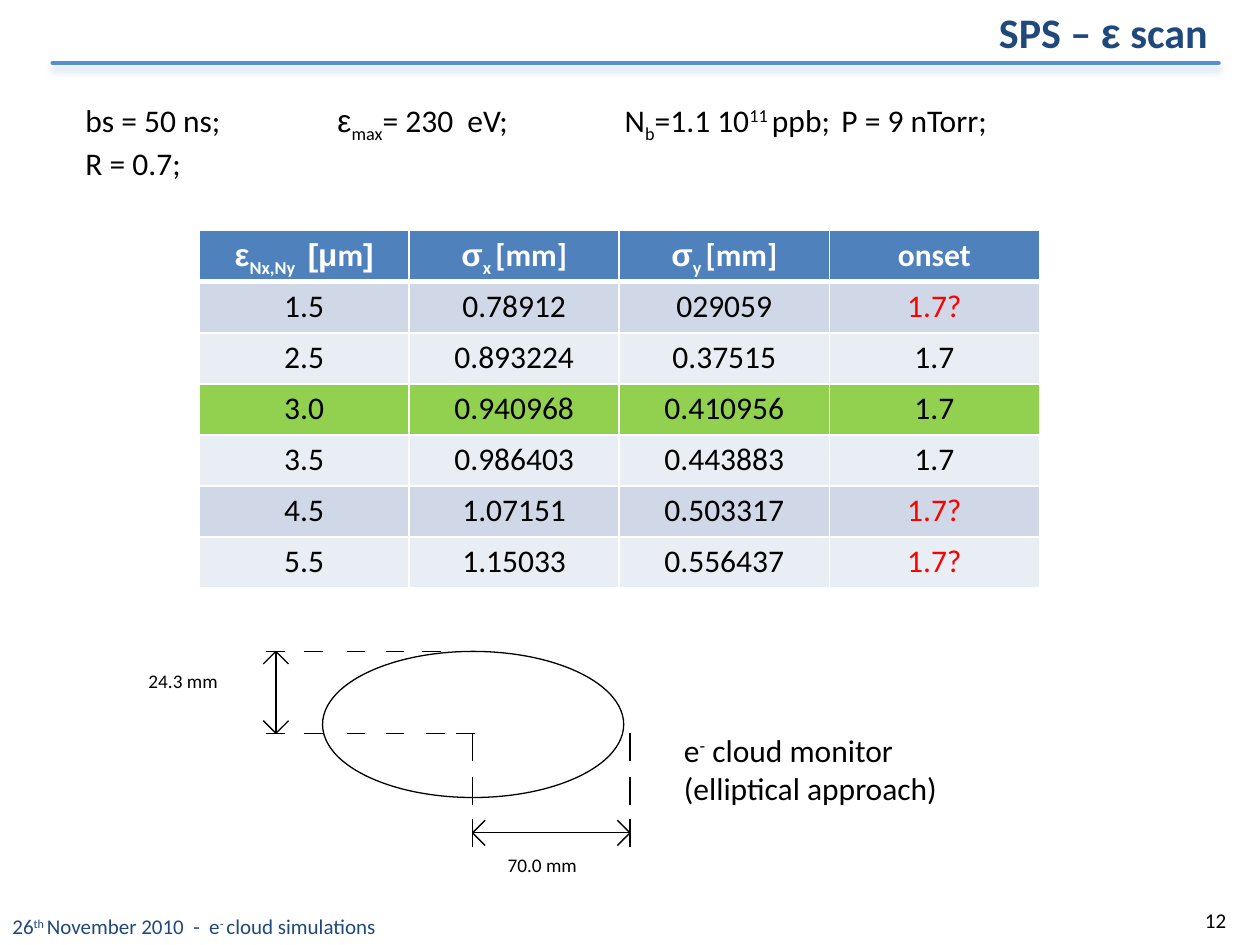
from lxml import etree
from pptx import Presentation
from pptx.dml.color import RGBColor
from pptx.enum.shapes import MSO_CONNECTOR, MSO_SHAPE
from pptx.enum.text import MSO_ANCHOR, PP_ALIGN
from pptx.oxml import parse_xml
from pptx.oxml.ns import nsdecls, qn
from pptx.util import Inches, Pt

STRAIGHT = MSO_CONNECTOR.STRAIGHT
ELLIPSE = MSO_SHAPE.OVAL
LEFT, CENTER, RIGHT = PP_ALIGN.LEFT, PP_ALIGN.CENTER, PP_ALIGN.RIGHT
TOP, MIDDLE = MSO_ANCHOR.TOP, MSO_ANCHOR.MIDDLE

BLACK, WHITE, RED, NAVY = "000000", "FFFFFF", "FF0000", "1F497D"
BLUE, GREEN = "4F81BD", "92D050"
BANDS = ("D0D8E8", "E9EDF4")
GREEK, SUB, SUPER = {"font": "Arial"}, {"baseline": -25}, {"baseline": 30}

HEADERS = [
    [("ε", GREEK), ("Nx,Ny   ", SUB), ("[μ", GREEK), "m", ("]", GREEK)],
    [("σ", GREEK), ("x ", SUB), "[mm]"],
    [("σ", GREEK), ("y ", SUB), "[mm]"],
    ["onset"],
]
SCAN = [
    ("1.5", "0.78912", "029059", "1.7?"),
    ("2.5", "0.893224", "0.37515", "1.7"),
    ("3.0", "0.940968", "0.410956", "1.7"),
    ("3.5", "0.986403", "0.443883", "1.7"),
    ("4.5", "1.07151", "0.503317", "1.7?"),
    ("5.5", "1.15033", "0.556437", "1.7?"),
]
HIGHLIGHTED = "3.0"


def color(value):
    return RGBColor.from_string(value)


def write(frame, paragraphs, size=18, fill=BLACK, bold=False, align=LEFT,
          line_spacing=None, space_after=None, tabs=()):
    for index, runs in enumerate(paragraphs):
        paragraph = frame.paragraphs[0] if index == 0 else frame.add_paragraph()
        paragraph.alignment = align
        paragraph.line_spacing = line_spacing
        if space_after:
            paragraph.space_after = Pt(space_after)
        if tabs:
            properties = paragraph._p.get_or_add_pPr()
            tab_list = etree.SubElement(properties, qn("a:tabLst"))
            for position in tabs:
                etree.SubElement(tab_list, qn("a:tab"), pos=str(Inches(position)), algn="l")
        for item in runs:
            text, style = (item, {}) if isinstance(item, str) else item
            run = paragraph.add_run()
            run.text = text
            run.font.name = style.get("font", "Calibri")
            run.font.size = Pt(size)
            run.font.bold = bold
            run.font.color.rgb = color(fill)
            if "baseline" in style:
                run._r.get_or_add_rPr().set("baseline", str(style["baseline"] * 1000))


def add_text(shapes, box, paragraphs, anchor=TOP, **text_format):
    shape = shapes.add_textbox(*map(Inches, box))
    shape.text_frame.word_wrap = True
    shape.text_frame.vertical_anchor = anchor
    write(shape.text_frame, paragraphs, **text_format)


def add_line(shapes, start, end, stroke=BLACK, width=0.75):
    line = shapes.add_connector(STRAIGHT, *map(Inches, (*start, *end)))
    line.line.color.rgb = color(stroke)
    line.line.width = Pt(width)
    effects = etree.SubElement(line._element.spPr, qn("a:effectLst"))
    return line, effects


def add_header(slide, left, top, width):
    line, effects = add_line(slide.shapes, (left, top + 0.5), (left + width, top + 0.5),
                             "558ED5", 2.75)
    line.line._get_or_add_ln().set("cap", "rnd")
    effects.append(parse_xml(
        f'<a:outerShdw {nsdecls("a")} blurRad="{Pt(4)}" dist="{Pt(3)}" dir="5400000" '
        'rotWithShape="0"><a:srgbClr val="95B3D7"><a:alpha val="40000"/></a:srgbClr>'
        '</a:outerShdw>'))
    add_text(slide.shapes, (left + 7.41, top, 2.08, 0.5),
             [["SPS – ", ("ε", GREEK), " scan"]], size=24, fill=NAVY, bold=True)


def add_footer(slide, left, top):
    add_text(slide.shapes, (left, top + 0.1, 9.42, 0.3),
             [["26", ("th ", SUPER), "November 2010  -  e", ("- ", SUPER), "cloud simulations"]],
             size=12, fill=NAVY)
    add_text(slide.shapes, (left + 7.5, top, 2.33, 0.4), [["12"]],
             anchor=MIDDLE, size=12, align=RIGHT)


def add_parameters(slide, box):
    add_text(slide.shapes, box, [
        ["bs = 50 ns; \t", ("ε", GREEK), ("max", SUB), "= 230  eV; \tN", ("b", SUB),
         "=1.1 10", ("11 ", SUPER), "ppb; \tP = 9 nTorr;"],
        ["R = 0.7;"],
    ], tabs=(2, 4.28, 6))


def set_borders(cell, top, bottom):
    properties = cell._tc.get_or_add_tcPr()
    widths = {"lnL": 1, "lnR": 1, "lnT": top, "lnB": bottom}
    for index, (side, width) in enumerate(widths.items()):
        properties.insert(index, parse_xml(
            f'<a:{side} {nsdecls("a")} w="{Pt(width)}"><a:solidFill>'
            f'<a:srgbClr val="{WHITE}"/></a:solidFill></a:{side}>'))


def fill_cell(cell, runs, background, top=1, bottom=1, **text_format):
    cell.margin_left = cell.margin_right = Inches(0.07)
    cell.margin_top = cell.margin_bottom = 0
    cell.fill.solid()
    cell.fill.fore_color.rgb = color(background)
    set_borders(cell, top, bottom)
    write(cell.text_frame, [runs], align=CENTER, line_spacing=1.15, **text_format)


def add_scan_table(slide, box):
    rows, columns = len(SCAN) + 1, len(HEADERS)
    table = slide.shapes.add_table(rows, columns, *map(Inches, box)).table
    for column in table.columns:
        column.width = Inches(box[2] / columns)
    for row in table.rows:
        row.height = Inches(box[3] / rows)
    for column, runs in enumerate(HEADERS):
        fill_cell(table.cell(0, column), runs, BLUE, bottom=3, fill=WHITE, bold=True)
    for row, values in enumerate(SCAN, 1):
        background = GREEN if values[0] == HIGHLIGHTED else BANDS[(row - 1) % 2]
        for column, value in enumerate(values):
            fill_cell(table.cell(row, column), [value], background,
                      top=3 if row == 1 else 1,
                      fill=RED if value.endswith("?") else BLACK)


def add_monitor(slide, left, top):
    shapes = slide.shapes.add_group_shape().shapes

    def line(x1, y1, x2, y2):
        add_line(shapes, (left + x1, top + y1), (left + x2, top + y2))

    ellipse = shapes.add_shape(ELLIPSE, *map(Inches, (left + 1.48, top, 2.39, 1.16)))
    ellipse.shadow.inherit = False
    ellipse.fill.solid()
    ellipse.fill.fore_color.rgb = color(WHITE)
    ellipse.line.color.rgb = color(BLACK)
    ellipse.line.width = Pt(0.75)

    arrow_x, arrow_y, wing = 1.11, 1.44, 0.1
    center_x, edge_x, center_y = 2.67, 3.92, 0.65
    for y, dashes in ((0, (1.03, 1.33, 1.67, 1.98, 2.27)),
                      (center_y, (1.03, 1.33, 1.67, 1.98, 2.3, 2.54))):
        for x in dashes:
            line(x, y, x + 0.15, y)
    for x in (center_x, edge_x):
        for y in (center_y, 1, 1.33):
            line(x, y, x, y + 0.22)

    line(arrow_x, 0, arrow_x, center_y)
    line(center_x, arrow_y, edge_x, arrow_y)
    for side in (-wing, wing):
        line(arrow_x, 0, arrow_x + side, wing)
        line(arrow_x, center_y, arrow_x + side, center_y - wing)
        line(center_x, arrow_y, center_x + wing, arrow_y + side)
        line(edge_x, arrow_y, edge_x - wing, arrow_y + side)

    for x, y, label in ((0, 0.09, "24.3 mm"), (2.85, 1.55, "70.0 mm")):
        add_text(shapes, (left + x, top + y, 1.03, 0.37), [[label]], size=11, space_after=10)
    add_text(slide.shapes, (left + 4.25, top + 0.58, 2.75, 0.71),
             [["e", ("-", SUPER), " cloud monitor (elliptical approach)"]])


def main():
    presentation = Presentation()
    presentation.slide_width = Inches(10)
    presentation.slide_height = Inches(7.5)
    slide = presentation.slides.add_slide(presentation.slide_layouts[6])
    add_header(slide, 0.42, 0, 9.25)
    add_footer(slide, 0, 7.1)
    add_parameters(slide, (0.58, 0.75, 9.08, 1.01))
    add_scan_table(slide, (1.58, 1.83, 6.67, 2.84))
    add_monitor(slide, 1.08, 5.17)
    presentation.save("out.pptx")


if __name__ == "__main__":
    main()
